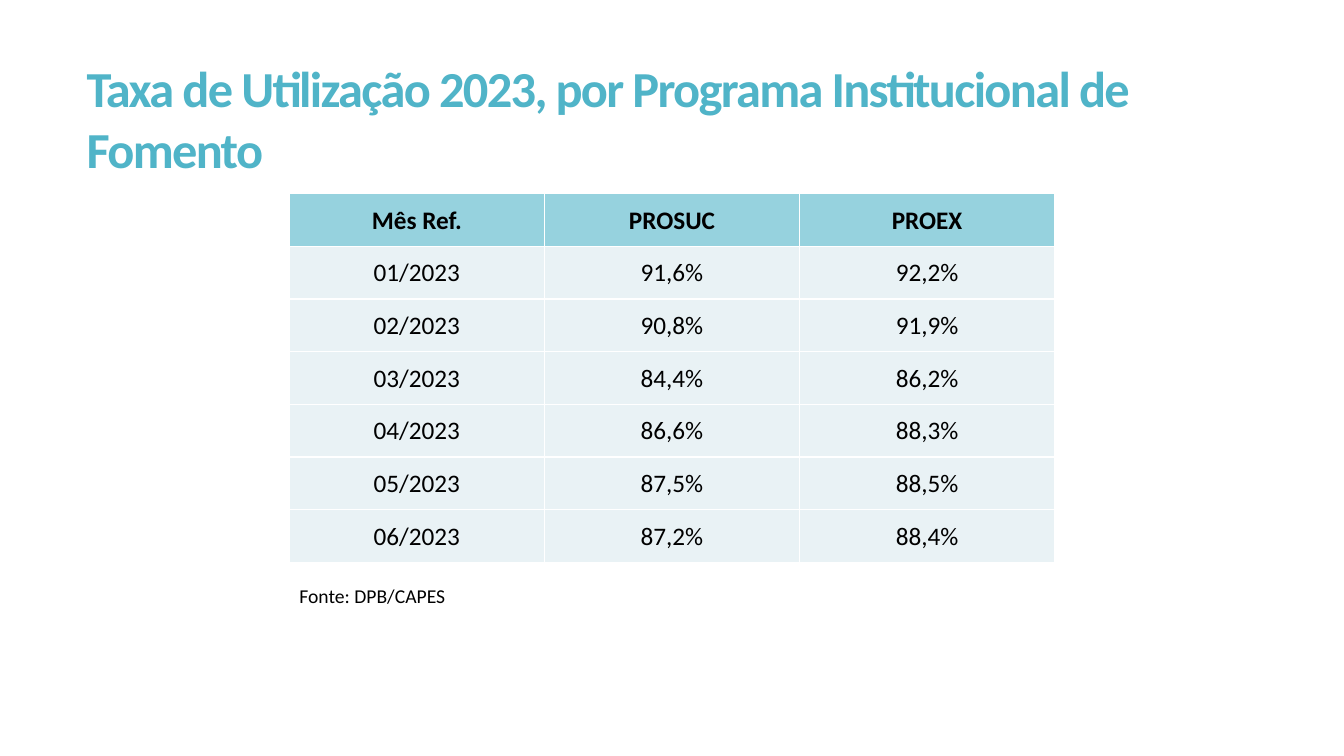
from lxml.etree import SubElement
from pptx import Presentation
from pptx.dml.color import RGBColor
from pptx.enum.text import MSO_ANCHOR, PP_ALIGN
from pptx.oxml.ns import qn
from pptx.util import Inches, Pt

TITLE = "Taxa de Utilização 2023, por Programa Institucional de Fomento"
SOURCE = "Fonte: DPB/CAPES"
RATES = [
    ("Mês Ref.", "PROSUC", "PROEX"),
    ("01/2023", "91,6%", "92,2%"),
    ("02/2023", "90,8%", "91,9%"),
    ("03/2023", "84,4%", "86,2%"),
    ("04/2023", "86,6%", "88,3%"),
    ("05/2023", "87,5%", "88,5%"),
    ("06/2023", "87,2%", "88,4%"),
]
FONT = "Calibri"
TEAL, HEADER_FILL, BODY_FILL = "50B4C8", "96D2DE", "E9F2F5"
BLACK, WHITE = "000000", "FFFFFF"
TABLE_LEFT, TABLE_TOP, TABLE_WIDTH, TABLE_HEIGHT = 2.87, 1.92, 7.59, 3.66


def color(value):
    return RGBColor.from_string(value)


def write(frame, text, size=18, fill=BLACK, bold=False, align=PP_ALIGN.LEFT, spacing=None):
    para = frame.paragraphs[0]
    para.alignment = align
    span = para.add_run()
    span.text = text
    span.font.name = FONT
    span.font.size = Pt(size)
    span.font.bold = bold
    span.font.color.rgb = color(fill)
    if spacing is not None:
        span.font._element.set("spc", str(round(spacing * 100)))


def add_text(page, text, left, top, width, height, **style):
    box = page.shapes.add_textbox(Inches(left), Inches(top), Inches(width), Inches(height))
    box.text_frame.word_wrap = True
    write(box.text_frame, text, **style)


def add_borders(cell, value, points):
    properties = cell._tc.get_or_add_tcPr()
    for side in ("a:lnL", "a:lnR", "a:lnT", "a:lnB"):
        line = SubElement(properties, qn(side), w=str(Pt(points)))
        fill = SubElement(line, qn("a:solidFill"))
        SubElement(fill, qn("a:srgbClr"), val=value)


def add_rates(page):
    table = page.shapes.add_table(
        len(RATES), len(RATES[0]),
        Inches(TABLE_LEFT), Inches(TABLE_TOP), Inches(TABLE_WIDTH), Inches(TABLE_HEIGHT),
    ).table
    table.horz_banding = False
    for row_index, values in enumerate(RATES):
        header = row_index == 0
        for column_index, text in enumerate(values):
            cell = table.cell(row_index, column_index)
            cell.margin_left = cell.margin_right = cell.margin_top = Inches(0.01)
            cell.margin_bottom = 0
            cell.vertical_anchor = MSO_ANCHOR.MIDDLE
            add_borders(cell, WHITE, 1)
            cell.fill.solid()
            cell.fill.fore_color.rgb = color(HEADER_FILL if header else BODY_FILL)
            write(cell.text_frame, text, bold=header, align=PP_ALIGN.CENTER)


def main():
    deck = Presentation()
    deck.slide_width, deck.slide_height = Inches(13.33), Inches(7.5)
    page = deck.slides.add_slide(deck.slide_layouts[6])
    add_rates(page)
    add_text(page, TITLE, 0.76, 0.52, 11.81, 0.71, size=36, fill=TEAL, bold=True, spacing=-1.2)
    add_text(page, SOURCE, TABLE_LEFT, 5.74, 5.59, 0.34, size=14)
    deck.save("out.pptx")


if __name__ == "__main__":
    main()
